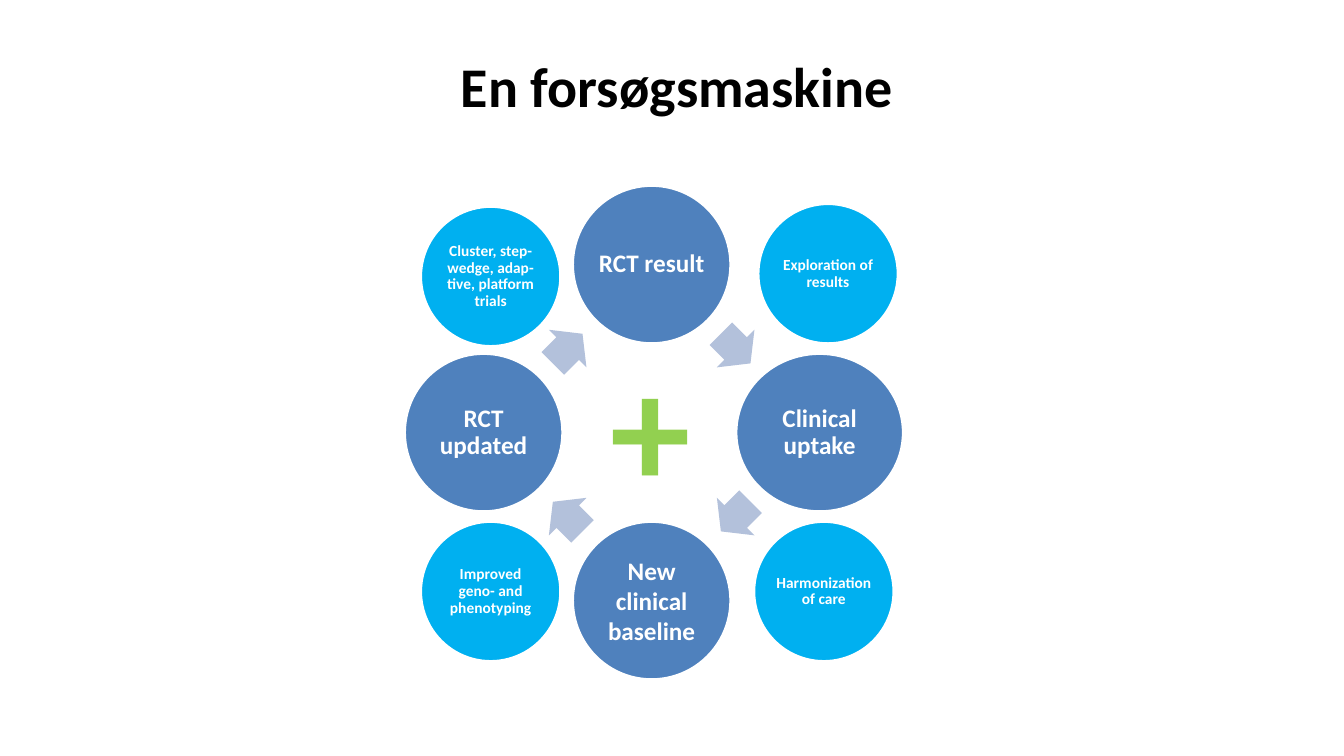
from pptx import Presentation
from pptx.dml.color import RGBColor
from pptx.enum.shapes import MSO_SHAPE
from pptx.enum.text import MSO_ANCHOR, MSO_AUTO_SIZE, PP_ALIGN
from pptx.util import Pt

OVAL, ARROW = MSO_SHAPE.OVAL, MSO_SHAPE.RIGHT_ARROW
TOP, MIDDLE = MSO_ANCHOR.TOP, MSO_ANCHOR.MIDDLE
CENTER, LEFT = PP_ALIGN.CENTER, PP_ALIGN.LEFT
FIXED = MSO_AUTO_SIZE.NONE

BLACK = RGBColor(0x00, 0x00, 0x00)
WHITE = RGBColor(0xFF, 0xFF, 0xFF)
BLUE = RGBColor(0x4F, 0x81, 0xBD)
CYAN = RGBColor(0x00, 0xB0, 0xF0)
PALE = RGBColor(0xB3, 0xC1, 0xDB)
GREEN = RGBColor(0x92, 0xD0, 0x50)

FONT = "Calibri"
MID_X, MID_Y, RADIUS = 465.5, 309, 120

# Main steps: text, direction from the middle, width, line spacing
STEPS = [
    ("RCT result", 0, -1, 113, 0.9),
    ("Clinical uptake", 1, 0, 119.5, 0.9),
    ("New clinical baseline", 0, 1, 113, 1.0),
    ("RCT updated", -1, 0, 113, 0.9),
]
# Side topics: text, centre
TOPICS = [
    ("Exploration of results", 591.5, 195.5),
    ("Harmonization of care", 588.5, 422.5),
    ("Improved geno- and phenotyping", 350.5, 422.5),
    ("Cluster, step-wedge, adap-tive, platform trials", 350.5, 197.5),
]
# Arrows clockwise from the upper right
TURNS = [(1, -1), (1, 1), (-1, 1), (-1, -1)]


def write(frame, text, size, color, align=CENTER, gap=1.0):
    para = frame.paragraphs[0]
    para.alignment = align
    para.line_spacing = gap
    run = para.add_run()
    run.text = text
    font = run.font
    font.name, font.size, font.bold = FONT, Pt(size), True
    font.color.rgb = color


def add_form(slide, kind, x, y, width, height, fill):
    """Add a filled shape centred on x, y."""
    form = slide.shapes.add_shape(
        kind, Pt(x - width / 2), Pt(y - height / 2), Pt(width), Pt(height))
    form.shadow.inherit = False
    form.fill.solid()
    form.fill.fore_color.rgb = fill
    return form


def add_disc(slide, text, x, y, width, height, fill, size, inset, gap=0.9):
    disc = add_form(slide, OVAL, x, y, width, height, fill)
    disc.line.color.rgb = WHITE
    disc.line.width = Pt(2)
    frame = disc.text_frame
    frame.word_wrap = True
    frame.vertical_anchor = MIDDLE
    frame.margin_left = frame.margin_right = Pt(inset)
    frame.margin_top = frame.margin_bottom = Pt(inset)
    write(frame, text, size, WHITE, gap=gap)


def add_arrow(slide, x, y, angle):
    arrow = add_form(slide, ARROW, x, y, 30, 38, PALE)
    arrow.line.fill.background()
    arrow.adjustments[0] = 0.6
    arrow.adjustments[1] = 0.5
    arrow.rotation = angle


def set_title(slide, text):
    title = slide.shapes.title
    title.left, title.top = Pt(163), Pt(33)
    title.width, title.height = Pt(641), Pt(55)
    frame = title.text_frame
    frame.auto_size = FIXED
    frame.vertical_anchor = TOP
    write(frame, text, 40, BLACK)


def add_plus(slide):
    box = slide.shapes.add_textbox(Pt(429), Pt(230.5), Pt(72), Pt(147))
    box.text_frame.word_wrap = False
    write(box.text_frame, "+", 115, GREEN, LEFT)


def main():
    deck = Presentation()
    deck.slide_width, deck.slide_height = Pt(960), Pt(540)
    slide = deck.slides.add_slide(deck.slide_layouts[5])
    set_title(slide, "En forsøgsmaskine")

    # Ring of main steps
    for text, dx, dy, width, gap in STEPS:
        add_disc(slide, text, MID_X + dx * RADIUS, MID_Y + dy * RADIUS,
                 width, 113, BLUE, 18, 2, gap)

    # Arrows halfway between the steps
    for turn, (dx, dy) in enumerate(TURNS):
        add_arrow(slide, MID_X + dx * RADIUS / 2, MID_Y + dy * RADIUS / 2,
                  45 + 90 * turn)

    # Side topics in the corners
    for text, x, y in TOPICS:
        add_disc(slide, text, x, y, 100, 100, CYAN, 11, 1.4)

    add_plus(slide)
    deck.save("out.pptx")


if __name__ == "__main__":
    main()
